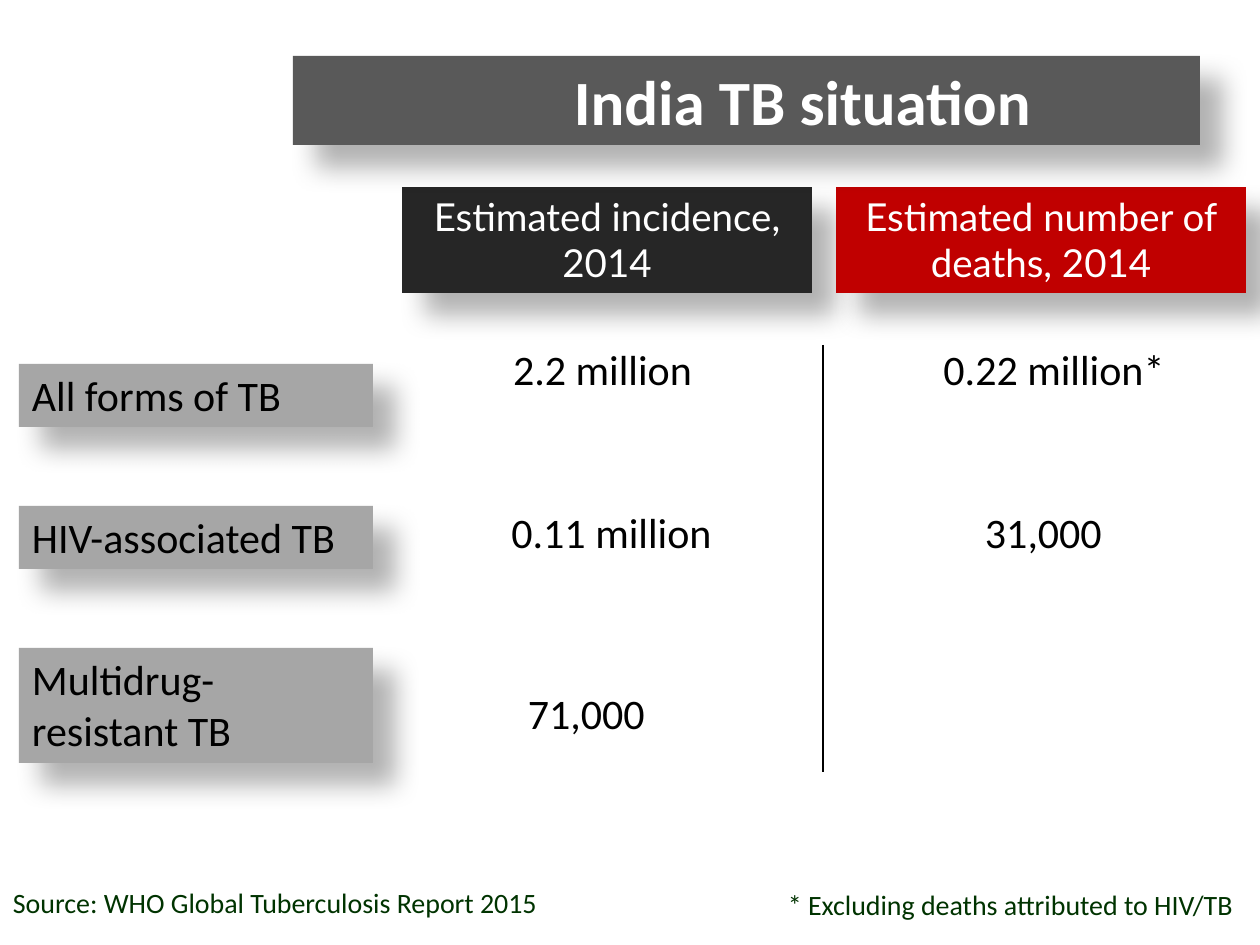
from dataclasses import dataclass

from lxml import etree
from pptx import Presentation
from pptx.dml.color import RGBColor
from pptx.enum.shapes import MSO_CONNECTOR, MSO_SHAPE
from pptx.enum.text import MSO_ANCHOR, MSO_AUTO_SIZE, PP_ALIGN
from pptx.oxml.ns import qn
from pptx.util import Emu, Pt

RECTANGLE = MSO_SHAPE.RECTANGLE
STRAIGHT = MSO_CONNECTOR.STRAIGHT
LEFT, CENTER, RIGHT = PP_ALIGN.LEFT, PP_ALIGN.CENTER, PP_ALIGN.RIGHT
TOP, MIDDLE = MSO_ANCHOR.TOP, MSO_ANCHOR.MIDDLE
GROW, FIXED = MSO_AUTO_SIZE.SHAPE_TO_FIT_TEXT, MSO_AUTO_SIZE.NONE

EMU_PER_PX = 914400 / 126
INSET_X, INSET_Y = 13, 6
COLORS = {
    "title": "595959",
    "incidence": "262626",
    "deaths": "C00000",
    "category": "A6A6A6",
    "dark": "000000",
    "light": "FFFFFF",
    "note": "003300",
}


@dataclass(frozen=True)
class Label:
    text: str
    left: int
    top: int
    width: int
    height: int
    size: int = 24
    color: str = "dark"
    align: PP_ALIGN = CENTER
    fill: str = ""
    font: str = "Calibri"
    indent: int = 0
    bold: bool = False
    anchor: MSO_ANCHOR = TOP
    autosize: MSO_AUTO_SIZE = GROW


def px(length: int) -> Emu:
    return Emu(round(length * EMU_PER_PX))


def rgb(name: str) -> RGBColor:
    return RGBColor.from_string(COLORS[name])


def add_shadow(panel) -> None:
    panel.shadow.inherit = False
    effects = panel._element.spPr.find(qn("a:effectLst"))
    shadow = etree.SubElement(
        effects, qn("a:outerShdw"), blurRad=str(Pt(15)), dist=str(Pt(18)),
        dir=str(45 * 60000), algn="tl", rotWithShape="0")
    tint = etree.SubElement(shadow, qn("a:srgbClr"), val=COLORS["dark"])
    etree.SubElement(tint, qn("a:alpha"), val="30000")


def draw_label(slide, label: Label) -> None:
    place = [px(n) for n in (label.left, label.top, label.width, label.height)]
    if label.fill:
        box = slide.shapes.add_shape(RECTANGLE, *place)
        box.fill.solid()
        box.fill.fore_color.rgb = rgb(label.fill)
        box.line.fill.background()
        add_shadow(box)
    else:
        box = slide.shapes.add_textbox(*place)
    frame = box.text_frame
    frame.word_wrap = True
    frame.auto_size = label.autosize
    frame.vertical_anchor = label.anchor
    frame.margin_left, frame.margin_right = px(INSET_X + label.indent), px(INSET_X)
    frame.margin_top = frame.margin_bottom = px(INSET_Y)
    paragraph = frame.paragraphs[0]
    paragraph.alignment = label.align
    run = paragraph.add_run()
    run.text = label.text
    run.font.name = label.font
    run.font.size = Pt(label.size)
    run.font.bold = label.bold
    run.font.color.rgb = rgb(label.color)


def draw_divider(slide, x: int, top: int, bottom: int) -> None:
    divider = slide.shapes.add_connector(STRAIGHT, px(x), px(top), px(x), px(bottom))
    divider.line.color.rgb = rgb("dark")
    divider.line.width = Pt(0.75)
    etree.SubElement(divider._element.spPr, qn("a:effectLst"))


def header(text: str, left: int, fill: str) -> Label:
    return Label(text, left, 187, 410, 106, 22, "light", fill=fill, font="Lato")


def category(text: str, row: int, height: int = 63) -> Label:
    return Label(text, 19, 364 + 142 * row, 354, height, align=LEFT, fill="category")


def note(text: str, left: int, top: int, width: int, align: PP_ALIGN) -> Label:
    return Label(text, left, top, width, 47, 16, "note", align)


LABELS = [
    header("Estimated incidence, 2014", 402, "incidence"),
    header("Estimated number of deaths, 2014", 836, "deaths"),
    category("All forms of TB", 0),
    category("HIV-associated TB", 1),
    category("Multidrug-resistant TB", 2, 115),
    Label("2.2 million", 411, 338, 383, 63),
    Label("0.22 million*", 850, 338, 372, 63, indent=36),
    Label("0.11 million", 410, 501, 387, 63, indent=16),
    Label("31,000", 853, 501, 381, 63),
    Label("71,000", 449, 682, 363, 63, align=LEFT, indent=66),
    note("Source: WHO Global Tuberculosis Report 2015", 0, 880, 1260, LEFT),
    note("* Excluding deaths attributed to HIV/TB", 104, 882, 1142, RIGHT),
    Label("India TB situation", 293, 56, 907, 89, 36, "light", fill="title",
          indent=112, bold=True, anchor=MIDDLE, autosize=FIXED),
]


def main() -> None:
    deck = Presentation()
    deck.slide_width, deck.slide_height = px(1260), px(945)
    slide = deck.slides.add_slide(deck.slide_layouts[6])
    for label in LABELS:
        draw_label(slide, label)
    draw_divider(slide, 823, 345, 772)
    deck.save("out.pptx")


if __name__ == "__main__":
    main()
